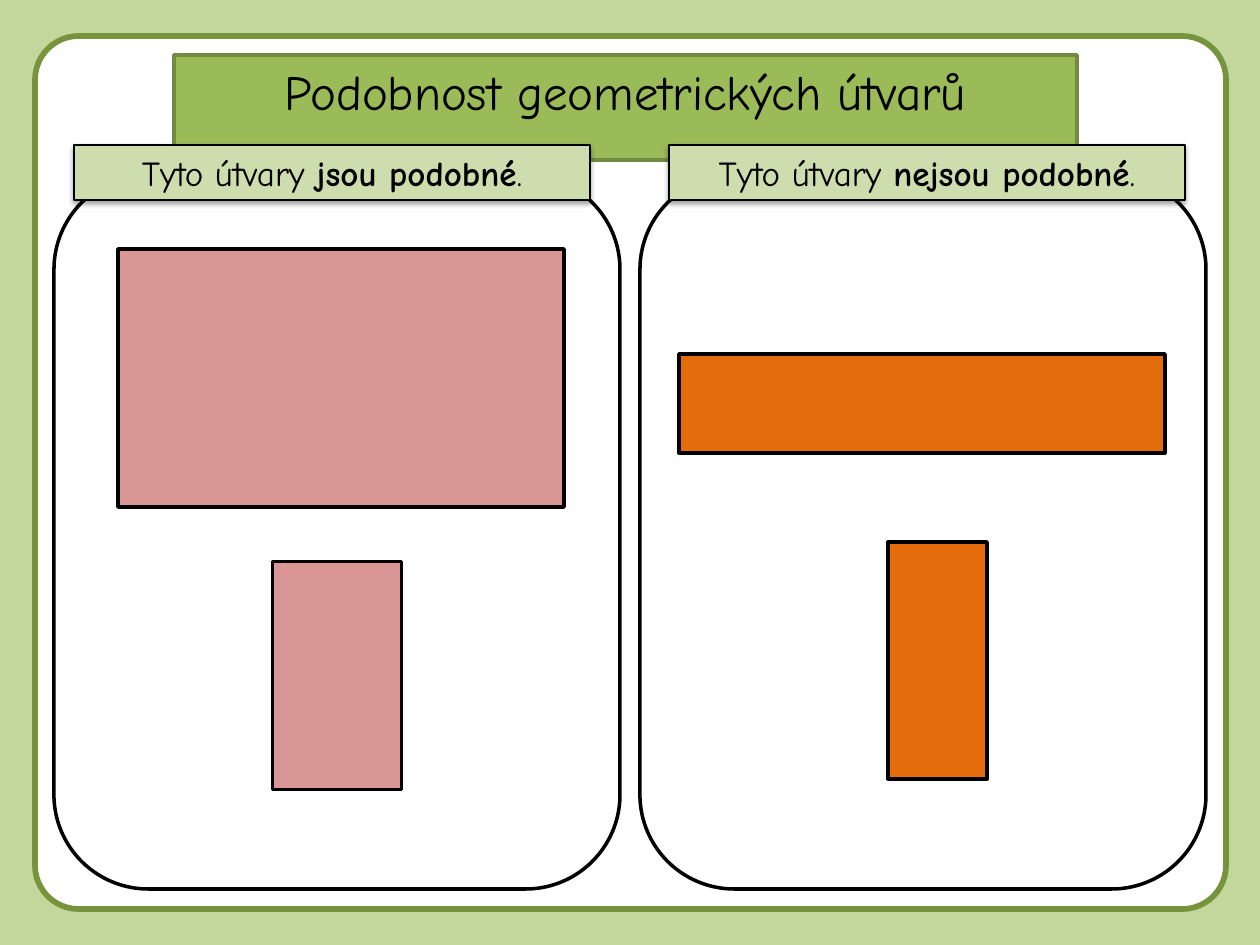
from lxml import etree
from pptx import Presentation
from pptx.dml.color import RGBColor
from pptx.enum.shapes import MSO_SHAPE as Preset
from pptx.enum.text import MSO_ANCHOR as Anchor, MSO_AUTO_SIZE as AutoSize, PP_ALIGN as Align
from pptx.oxml.ns import qn
from pptx.util import Emu, Pt

PX_PER_INCH = 126
FONT = "Comic Neue"
BLACK, WHITE = "000000", "FFFFFF"
PINK, ORANGE = "D99694", "E46C0A"


def px(length):
    return Emu(round(length * 914400 / PX_PER_INCH))


def colour(value):
    return RGBColor.from_string(value)


def paint(shape, fill, line, width):
    shape.fill.solid()
    shape.fill.fore_color.rgb = colour(fill)
    shape.line.color.rgb = colour(line)
    shape.line.width = Pt(width)


def add_box(slide, preset, box, fill, line=BLACK, width=2, rotation=0):
    shape = slide.shapes.add_shape(preset, *map(px, box))
    shape.shadow.inherit = False
    paint(shape, fill, line, width)
    shape.rotation = rotation
    return shape


def write(shape, parts, size):
    """Fill the shape with centred (text, bold) runs."""
    frame = shape.text_frame
    frame.word_wrap = True
    frame.auto_size = AutoSize.SHAPE_TO_FIT_TEXT
    frame.vertical_anchor = Anchor.TOP
    paragraph = frame.paragraphs[0]
    paragraph.alignment = Align.CENTER
    for text, bold in parts:
        run = paragraph.add_run()
        run.text = text
        run.font.name = FONT
        run.font.size = Pt(size)
        run.font.bold = bold
        run.font.color.rgb = colour(BLACK)


def add_shadow(shape):
    effects = shape.element.spPr.find(qn("a:effectLst"))
    shadow = etree.SubElement(effects, qn("a:outerShdw"), blurRad=str(Pt(3.1)),
                              dist=str(Pt(1.6)), dir="5400000", rotWithShape="0")
    tint = etree.SubElement(shadow, qn("a:srgbClr"), val=BLACK)
    etree.SubElement(tint, qn("a:alpha"), val="38000")


def add_title(slide, text, box):
    title = slide.shapes.title
    title.left, title.top, title.width, title.height = map(px, box)
    paint(title, "9BBB59", "738A42", 2)
    write(title, [(text, False)], 28)
    # Bring the title in front of the frame
    title.element.getparent().append(title.element)


def add_panel(slide, left, label_left, emphasis):
    add_box(slide, Preset.ROUNDED_RECTANGLE, (left, 175, 566, 714), WHITE)
    label = add_box(slide, Preset.RECTANGLE, (label_left, 145, 516, 55), "CDDDAD", width=0.75)
    add_shadow(label)
    write(label, [("Tyto útvary ", False), (emphasis, True), (".", False)], 20)


def main():
    presentation = Presentation()
    presentation.slide_width, presentation.slide_height = px(1260), px(945)
    slide = presentation.slides.add_slide(presentation.slide_layouts[5])

    # Background, frame and title
    slide.background.fill.solid()
    slide.background.fill.fore_color.rgb = colour("C3D69B")
    frame = add_box(slide, Preset.ROUNDED_RECTANGLE, (35, 36, 1191, 873), WHITE, "77933C", 3.25)
    frame.adjustments[0] = 0.05
    add_title(slide, "Podobnost geometrických útvarů", (174, 55, 903, 72))

    # Panels with their labels
    add_panel(slide, 54, 74, "jsou podobné")
    add_panel(slide, 640, 669, "nejsou podobné")

    # Compared rectangles: the lower one of each pair stands upright
    for box, fill, rotation in [
        ((118, 249, 446, 258), PINK, 0),
        ((223, 611, 228, 129), PINK, 90),
        ((679, 354, 486, 99), ORANGE, 0),
        ((819, 611, 237, 99), ORANGE, 90),
    ]:
        add_box(slide, Preset.RECTANGLE, box, fill, rotation=rotation)

    presentation.save("out.pptx")


if __name__ == "__main__":
    main()
